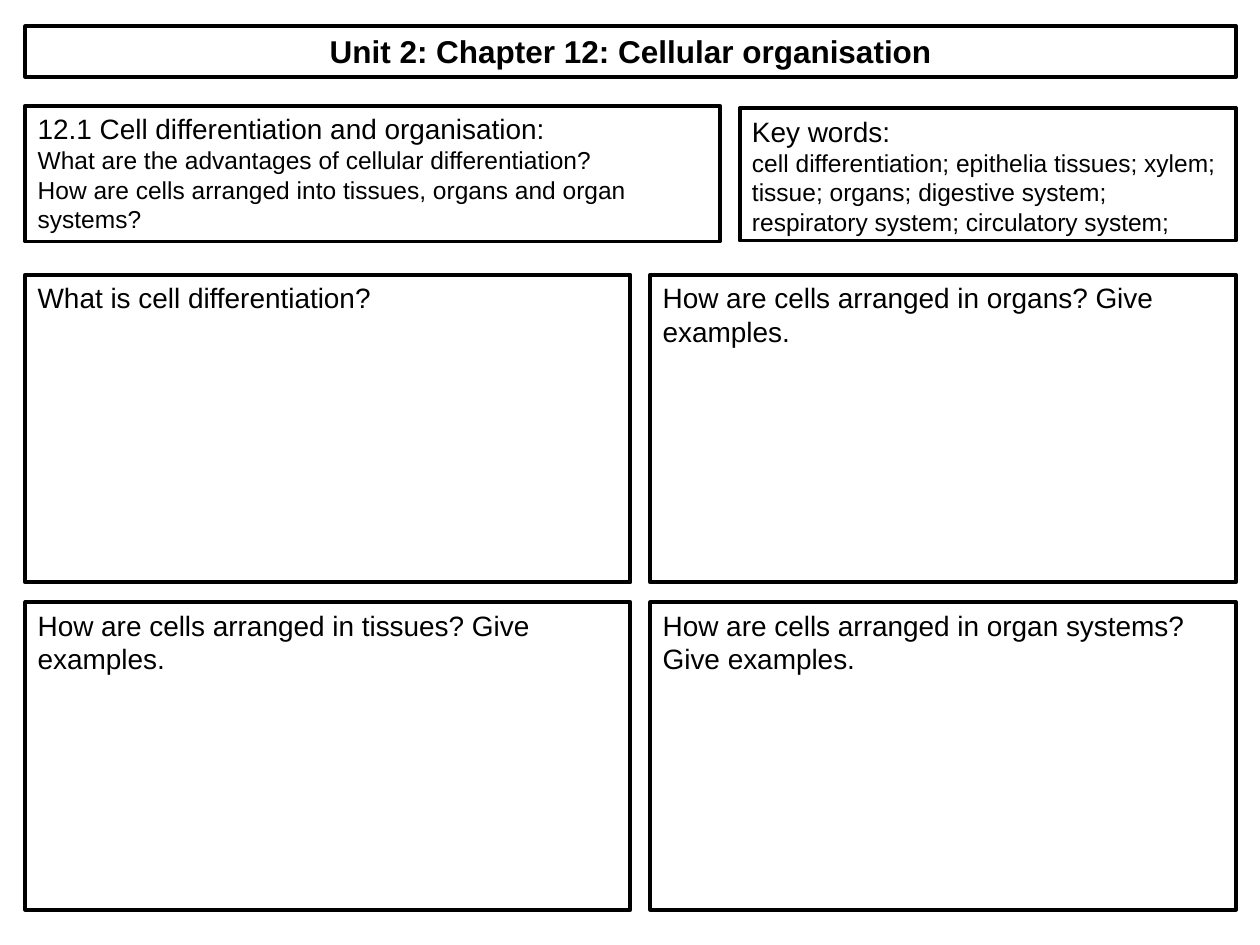
from pptx import Presentation
from pptx.dml.color import RGBColor
from pptx.enum.shapes import MSO_SHAPE
from pptx.enum.text import MSO_ANCHOR, MSO_AUTO_SIZE, PP_ALIGN
from pptx.util import Cm, Pt

BLACK = RGBColor(0, 0, 0)
WHITE = RGBColor(255, 255, 255)

LEFT, RIGHT, GAP = 0.51, 24.92, 0.4
QUESTION_WIDTH, QUESTION_HEIGHT = 12.2, 6.2
QUESTION_TOP = 5.54
QUESTIONS = [
    ["What is cell differentiation?", "How are cells arranged in organs? Give examples."],
    [
        "How are cells arranged in tissues? Give examples.",
        "How are cells arranged in organ systems? Give examples.",
    ],
]


def write_text(paragraph, text, size=16, bold=False, align=PP_ALIGN.LEFT, font="Arial", color=BLACK):
    paragraph.alignment = align
    run = paragraph.add_run()
    run.text = text
    run.font.name = font
    run.font.size = Pt(size)
    run.font.bold = bold
    run.font.color.rgb = color


class Worksheet:
    """Draws outlined text panels on one slide in a shared style."""

    def __init__(self, slide, fill=WHITE, line=BLACK, line_width=2.25):
        self.slide = slide
        self.fill = fill
        self.line = line
        self.line_width = line_width

    def panel(self, left, top, width, height, heading, details=(), grow=False, **text_format):
        shape = self.slide.shapes.add_shape(
            MSO_SHAPE.RECTANGLE, Cm(left), Cm(top), Cm(width), Cm(height)
        )
        shape.shadow.inherit = False
        shape.fill.solid()
        shape.fill.fore_color.rgb = self.fill
        shape.line.color.rgb = self.line
        shape.line.width = Pt(self.line_width)
        frame = shape.text_frame
        frame.word_wrap = True
        frame.vertical_anchor = MSO_ANCHOR.TOP
        frame.auto_size = MSO_AUTO_SIZE.SHAPE_TO_FIT_TEXT if grow else MSO_AUTO_SIZE.NONE
        write_text(frame.paragraphs[0], heading, **text_format)
        for detail in details:
            write_text(frame.add_paragraph(), detail, size=14)


def main():
    presentation = Presentation()
    presentation.slide_width, presentation.slide_height = Cm(25.4), Cm(19.05)
    worksheet = Worksheet(presentation.slides.add_slide(presentation.slide_layouts[6]))

    worksheet.panel(
        LEFT, 0.53, RIGHT - LEFT, 1.02, "Unit 2: Chapter 12: Cellular organisation",
        grow=True, size=18, bold=True, align=PP_ALIGN.CENTER,
    )
    worksheet.panel(
        LEFT, 2.13, 14, 2.74, "12.1 Cell differentiation and organisation:",
        [
            "What are the advantages of cellular differentiation?",
            "How are cells arranged into tissues, organs and organ systems?",
        ],
        grow=True,
    )
    key_words_left = LEFT + 14 + GAP
    worksheet.panel(
        key_words_left, 2.18, RIGHT - key_words_left, 2.67, "Key words:",
        [
            "cell differentiation; epithelia tissues; xylem; tissue; organs; "
            "digestive system; respiratory system; circulatory system;"
        ],
    )

    second_left = LEFT + QUESTION_WIDTH + GAP
    columns = [(LEFT, QUESTION_WIDTH), (second_left, RIGHT - second_left)]
    for row, questions in enumerate(QUESTIONS):
        top = QUESTION_TOP + row * (QUESTION_HEIGHT + GAP)
        for (left, width), question in zip(columns, questions):
            worksheet.panel(left, top, width, QUESTION_HEIGHT, question)

    presentation.save("out.pptx")


if __name__ == "__main__":
    main()
